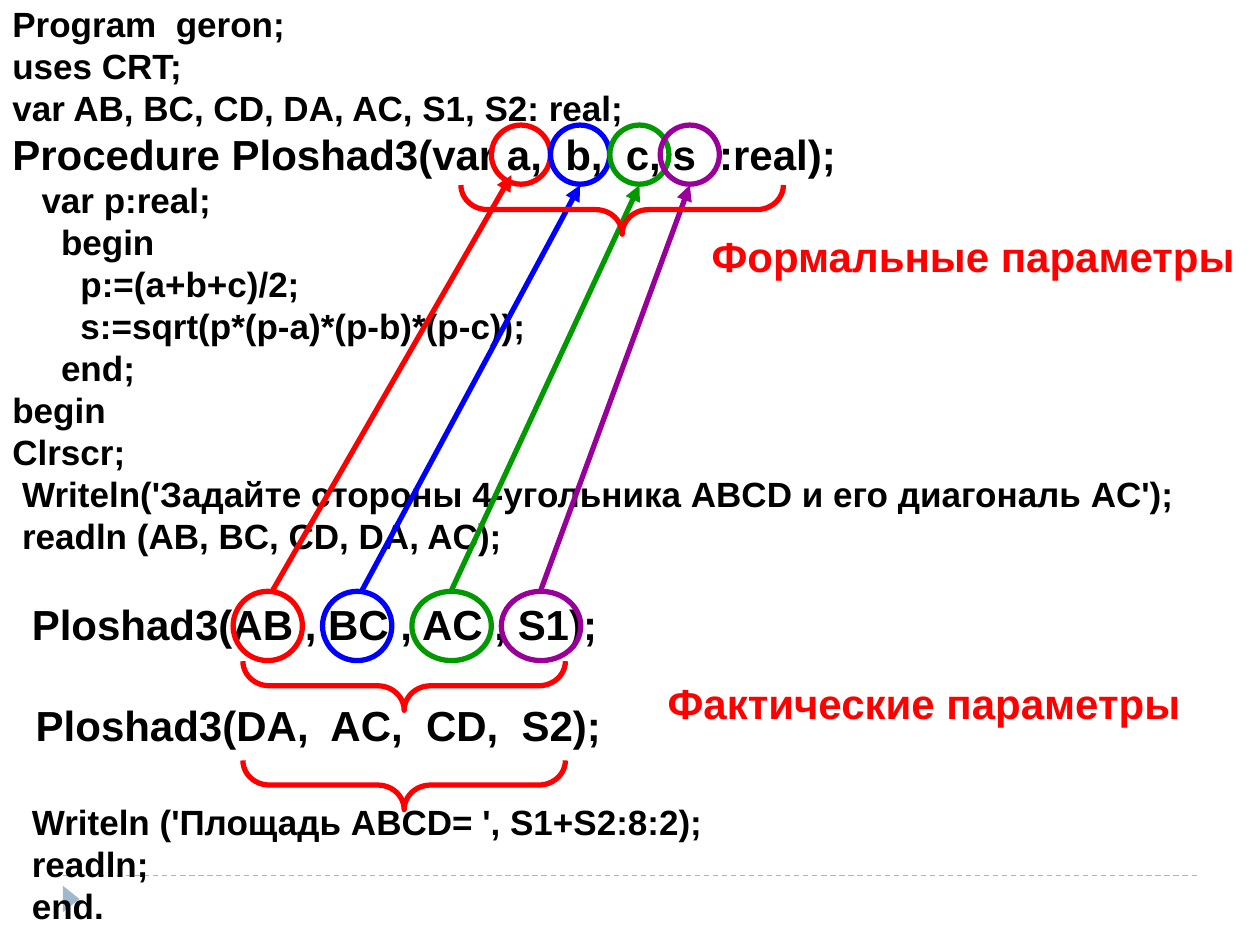
"""Build the slide on formal and actual parameters."""
from pptx import Presentation
from pptx.dml.color import RGBColor
from pptx.enum.dml import MSO_LINE
from pptx.enum.shapes import MSO_CONNECTOR, MSO_SHAPE as Kind
from pptx.oxml.ns import qn
from pptx.util import Pt
from lxml.etree import SubElement

RED, BLUE, GREEN, PURPLE = "FF0000", "0000FF", "009900", "990099"
PALE = "9FB8CD"
SPACE = 5.56
CODE = [
    ("Program  geron;", 20, 0, 0),
    ("uses CRT;", 20, 0, 0),
    ("var AB, BC, CD, DA, AC, S1, S2: real;", 20, 0, 0),
    ("Procedure Ploshad3(var a,  b,  c, s  :real);", 24, 0, 0),
    ("var p:real;", 20, 3, 0),
    ("begin", 20, 5, 0),
    ("p:=(a+b+c)/2;", 20, 7, 0),
    ("s:=sqrt(p*(p-a)*(p-b)*(p-c));", 20, 7, 0),
    ("end;", 20, 5, 0),
    ("begin", 20, 0, 0),
    ("Clrscr;", 20, 0, 0),
    ("Writeln('Задайте стороны 4-угольника ABCD и его диагональ AC');", 20, 1, 0),
    ("readln (AB, BC, CD, DA, AC);", 20, 1, 0),
    ("Ploshad3(AB , BC , AC , S1);", 24, 2, 24),
    ("Ploshad3(DA,  AC,  CD,  S2);", 24, 2.4, 28.8),
    ("Writeln ('Площадь ABCD= ', S1+S2:8:2);", 20, 2, 28.8),
    ("readln;", 20, 2, 0),
    ("end.", 20, 2, 0),
]
LABELS = [("Формальные параметры", 399.6, 128.2), ("Фактические параметры", 374.4, 383.4)]
PAIRS = [
    (RED, 280.8, 39.6, (292.3, 100.1)),
    (BLUE, 314.6, 39.6, (331.5, 105.8)),
    (GREEN, 348.5, 45.4, (365.4, 105.8)),
    (PURPLE, 377.3, 45.4, (394.2, 105.8)),
]
BRACES = [(341.5, 27.6), (216.9, 299.7), (216.9, 356.4)]


def paint(hue):
    return RGBColor.from_string(hue)


def box(slide, left, top, width, height):
    frame = slide.shapes.add_textbox(Pt(left), Pt(top), Pt(width), Pt(height)).text_frame
    frame.word_wrap = True
    return frame


def write(para, text, size=24, hue="000000", indent=0, gap=0):
    para.space_before = Pt(gap)
    props = para._p.get_or_add_pPr()
    props.set("marL", str(Pt(indent)))
    props.set("indent", "0")
    run = para.add_run()
    run.text = text
    font = run.font
    font.name, font.size, font.bold = "Arial", Pt(size), True
    font.color.rgb = paint(hue)


def draw(slide, kind, left, top, width, height, line=None, fill=None, turn=0):
    shape = slide.shapes.add_shape(kind, Pt(left), Pt(top), Pt(width), Pt(height))
    shape.shadow.inherit = False
    shape.rotation = turn
    if fill:
        shape.fill.solid()
        shape.fill.fore_color.rgb = paint(fill)
    else:
        shape.fill.background()
    if line:
        shape.line.color.rgb = paint(line)
        shape.line.width = Pt(3)
    else:
        shape.line.fill.background()
    return shape


def link(slide, start, end, hue, width=3, arrow=True):
    line = slide.shapes.add_connector(MSO_CONNECTOR.STRAIGHT, *map(Pt, start + end))
    line.line.color.rgb = paint(hue)
    line.line.width = Pt(width)
    if arrow:
        SubElement(line.line._get_or_add_ln(), qn("a:tailEnd"), type="triangle")
    else:
        line.line.dash_style = MSO_LINE.DASH
    SubElement(line._element.spPr, qn("a:effectLst"))


def main():
    deck = Presentation()
    deck.slide_width, deck.slide_height = Pt(720), Pt(540)
    slide = deck.slides.add_slide(deck.slide_layouts[6])

    link(slide, (36, 500.4), (684, 500.4), PALE, 0.75, arrow=False)
    draw(slide, Kind.ISOSCELES_TRIANGLE, 33.1, 509, 15.1, 9.4, fill=PALE, turn=90)

    frame = box(slide, 0, -2.2, 689, 540.7)
    for i, (text, size, spaces, gap) in enumerate(CODE):
        para = frame.add_paragraph() if i else frame.paragraphs[0]
        write(para, text, size, indent=spaces * SPACE, gap=gap)

    for i, (hue, formal, width, tip) in enumerate(PAIRS):
        actual = 133.2 + 51.1 * i
        draw(slide, Kind.OVAL, actual, 337.9, width, 39.6, line=hue)
        draw(slide, Kind.OVAL, formal, 71.5, 33.8, 33.8, line=hue)
        link(slide, (actual + 22.3, 337.9), tip, hue)

    for left, top in BRACES:
        brace = draw(slide, Kind.LEFT_BRACE, left, top, 28.1, 184.3, line=RED, turn=270)
        brace.adjustments[0] = 0.54

    for text, left, top in LABELS:
        write(box(slide, left, top, 345.6, 36).paragraphs[0], text, hue=RED)

    deck.save("out.pptx")


if __name__ == "__main__":
    main()
